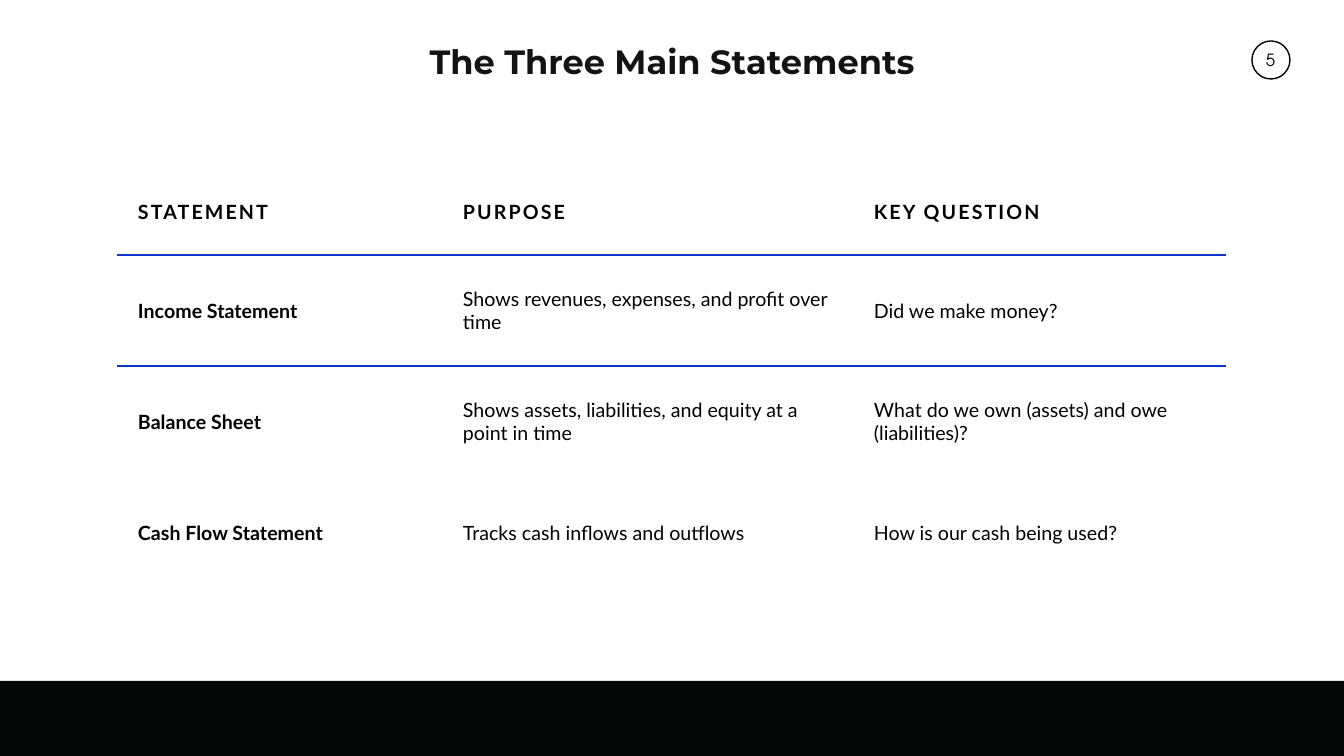
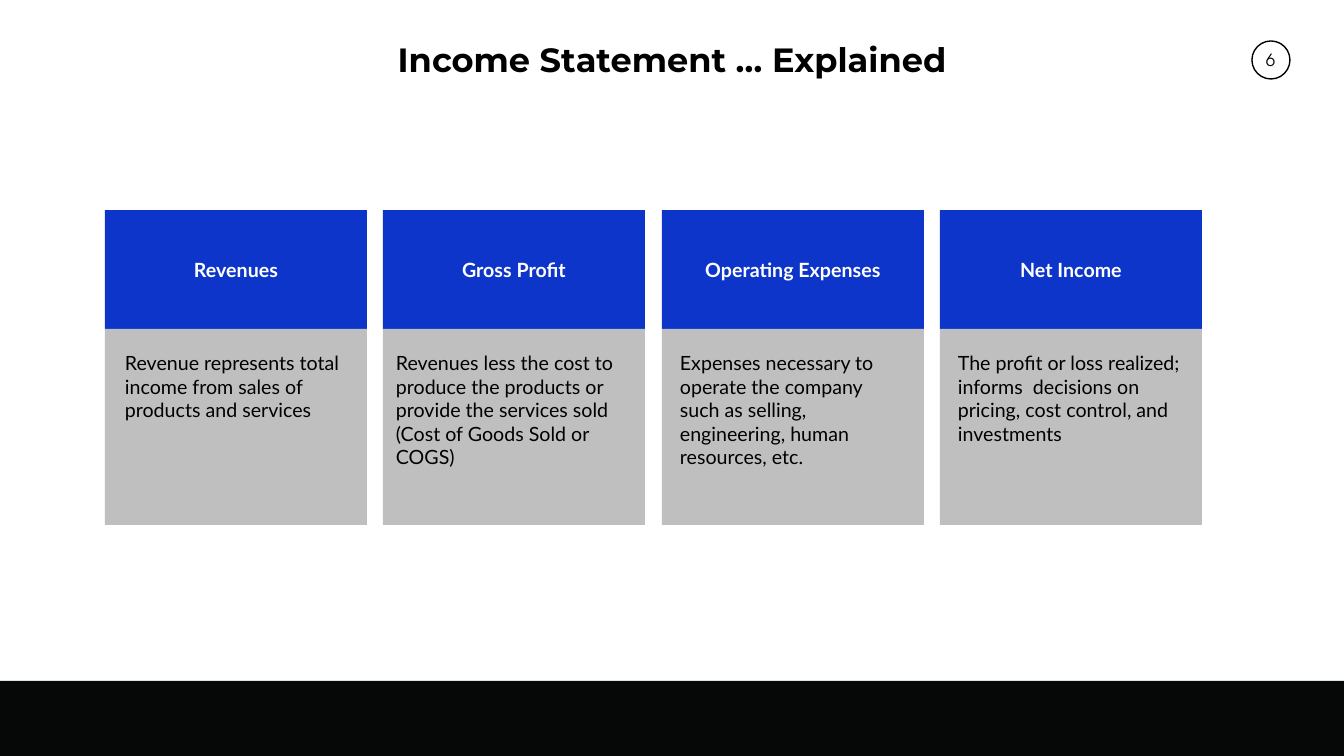
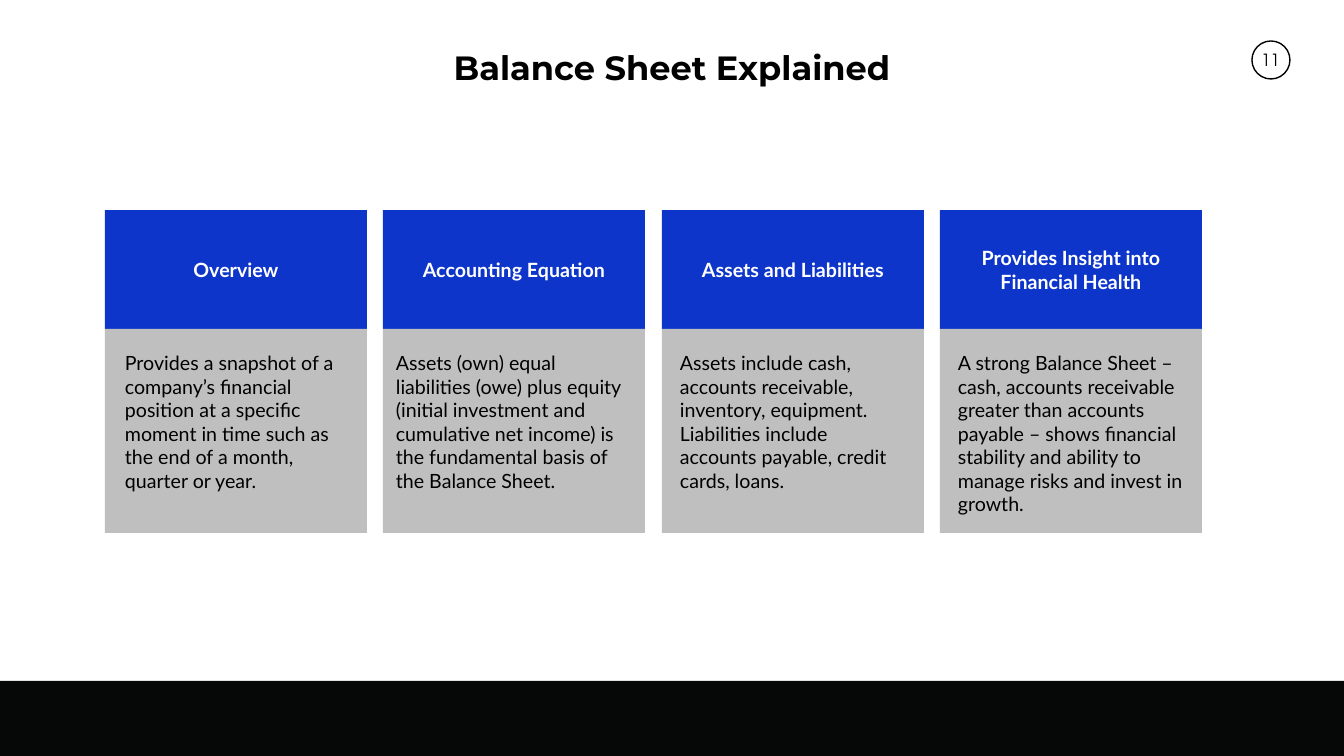
from pptx import Presentation
from pptx.dml.color import RGBColor
from pptx.enum.shapes import MSO_SHAPE
from pptx.enum.text import MSO_ANCHOR, MSO_AUTO_SIZE, PP_ALIGN
from pptx.oxml import parse_xml
from pptx.oxml.ns import nsdecls, qn
from pptx.util import Pt

RECTANGLE, OVAL = MSO_SHAPE.RECTANGLE, MSO_SHAPE.OVAL
TOP, MIDDLE = MSO_ANCHOR.TOP, MSO_ANCHOR.MIDDLE
LEFT, CENTER = PP_ALIGN.LEFT, PP_ALIGN.CENTER
FIXED, GROW = MSO_AUTO_SIZE.NONE, MSO_AUTO_SIZE.SHAPE_TO_FIT_TEXT

COLORS = {
    "black": "000000",
    "ink": "131316",
    "band": "060808",
    "blue": "0E35CA",
    "gray": "BFBFBF",
    "white": "FFFFFF",
}
BODY_FONT, TITLE_FONT, NUMBER_FONT = "Lato", "Montserrat", "TeX Gyre Adventor"
TITLE_ONLY = 5
NO_TABLE_STYLE = "{2D5ABB26-0587-4C30-8999-92F81FD0307C}"

# Slide and card grid, in px
WIDTH, HEIGHT = 1344, 756
CARD_LEFT, CARD_RIGHT, CARD_WIDTH = 105, 1202, 262
CARD_TOP, HEAD_HEIGHT = 210, 119
TEXT_OFFSETS = (10, 3, 8, 8)
TEXT_WIDTHS = (239, 259, 243, 262)

STATEMENTS = [
    ("STATEMENT", "PURPOSE", "KEY QUESTION"),
    ("Income Statement", "Shows revenues, expenses, and profit over time",
     "Did we make money?"),
    ("Balance Sheet", "Shows assets, liabilities, and equity at a point in time",
     "What do we own (assets) and owe (liabilities)?"),
    ("Cash Flow Statement", "Tracks cash inflows and outflows",
     "How is our cash being used?"),
]
INCOME_CARDS = [
    ("Revenues",
     "Revenue represents total income from sales of products and services"),
    ("Gross Profit",
     "Revenues less the cost to produce the products or provide the services "
     "sold (Cost of Goods Sold or COGS)"),
    ("Operating Expenses",
     "Expenses necessary to operate the company such as selling, engineering, "
     "human resources, etc."),
    ("Net Income",
     "The profit or loss realized; informs  decisions on pricing, cost control, "
     "and investments"),
]
BALANCE_CARDS = [
    ("Overview",
     "Provides a snapshot of a company’s financial position at a specific moment "
     "in time such as the end of a month, quarter or year."),
    ("Accounting Equation",
     "Assets (own) equal liabilities (owe) plus equity (initial investment and "
     "cumulative net income) is the fundamental basis of the Balance Sheet."),
    ("Assets and Liabilities",
     "Assets include cash, accounts receivable, inventory, equipment. "
     "Liabilities include accounts payable, credit cards, loans."),
    ("Provides Insight into Financial Health",
     "A strong Balance Sheet – cash, accounts receivable greater than accounts "
     "payable – shows financial stability and ability to manage risks and "
     "invest in growth."),
]


def px(length):
    return round(length * 914400 / 100.8)


def box(left, top, width, height):
    return px(left), px(top), px(width), px(height)


def color(name):
    return RGBColor.from_string(COLORS[name])


def write(frame, text, size=14, font=BODY_FONT, ink="black", bold=False, align=LEFT):
    paragraph = frame.paragraphs[0]
    paragraph.alignment = align
    run = paragraph.add_run()
    run.text = text
    run.font.size = Pt(size)
    run.font.name = font
    run.font.bold = bold
    run.font.color.rgb = color(ink)
    return run


def add_block(slide, kind, place, fill=None, line=None):
    block = slide.shapes.add_shape(kind, *box(*place))
    block.shadow.inherit = False
    if fill:
        block.fill.solid()
        block.fill.fore_color.rgb = color(fill)
    else:
        block.fill.background()
    if line:
        block.line.color.rgb = color(line)
        block.line.width = Pt(1)
    else:
        block.line.fill.background()
    return block


def add_text(slide, place, text, wrap=True, **style):
    frame = slide.shapes.add_textbox(*box(*place)).text_frame
    frame.word_wrap = wrap
    frame.auto_size = GROW
    frame.vertical_anchor = TOP
    write(frame, text, **style)


def start_slide(prs, title, number, title_top, title_ink="black"):
    """New slide with the shared page number, band and title style."""
    slide = prs.slides.add_slide(prs.slide_layouts[TITLE_ONLY])
    add_block(slide, OVAL, (1252, 41, 38, 38), line="black")
    add_text(slide, (1250, 45, 41, 30), str(number), wrap=False, size=12,
             font=NUMBER_FONT, align=CENTER)
    add_block(slide, RECTANGLE, (0, 681, WIDTH, HEIGHT - 681), fill="band")

    heading = slide.shapes.title
    heading.left, heading.top, heading.width, heading.height = box(
        93, title_top, 1158, 60)
    frame = heading.text_frame
    frame.auto_size = FIXED
    frame.word_wrap = True
    frame.vertical_anchor = MIDDLE
    write(frame, title, size=24, font=TITLE_FONT, ink=title_ink, bold=True,
          align=CENTER)
    frame.paragraphs[0].line_spacing = 0.9
    return slide


def add_border(cell, side):
    cell._tc.get_or_add_tcPr().insert(0, parse_xml(
        f'<a:{side} {nsdecls("a")} w="{Pt(2.25)}"><a:solidFill>'
        f'<a:srgbClr val="{COLORS["blue"]}"/></a:solidFill></a:{side}>'))


def add_statement_table(slide, rows):
    widths, heights = (325, 411, 373), (87, 111, 111, 111)
    holder = slide.shapes.add_table(
        len(rows), len(widths), *box(117, 168, sum(widths), sum(heights)))
    table = holder.table
    table.first_row = table.horz_banding = False
    next(holder.element.iter(qn("a:tableStyleId"))).text = NO_TABLE_STYLE
    for column, width in zip(table.columns, widths):
        column.width = px(width)
    for r, (texts, height) in enumerate(zip(rows, heights)):
        table.rows[r].height = px(height)
        for c, text in enumerate(texts):
            cell = table.cell(r, c)
            cell.fill.background()
            cell.vertical_anchor = MIDDLE
            cell.margin_left = cell.margin_right = px(21)
            cell.margin_top = cell.margin_bottom = px(21)
            run = write(cell.text_frame, text, bold=r == 0 or c == 0)
            if r == 0:
                run._r.get_or_add_rPr().set("spc", "150")
            # The header rule is shared by the first two rows
            if r < 2:
                add_border(cell, ("lnB", "lnT")[r])


def add_cards(slide, cards, body_height):
    pitch = (CARD_RIGHT - CARD_LEFT - CARD_WIDTH) / (len(cards) - 1)
    body_top = CARD_TOP + HEAD_HEIGHT
    for i, (head, body) in enumerate(cards):
        left = CARD_LEFT + round(i * pitch)
        header = add_block(slide, RECTANGLE,
                           (left, CARD_TOP, CARD_WIDTH, HEAD_HEIGHT), fill="blue")
        header.text_frame.word_wrap = True
        header.text_frame.vertical_anchor = MIDDLE
        write(header.text_frame, head, ink="white", bold=True, align=CENTER)
        add_block(slide, RECTANGLE, (left, body_top, CARD_WIDTH, body_height),
                  fill="gray")
        add_text(slide, (left + TEXT_OFFSETS[i], body_top + 17,
                         TEXT_WIDTHS[i], body_height - 28), body)


def main():
    prs = Presentation()
    prs.slide_width, prs.slide_height = px(WIDTH), px(HEIGHT)

    # Overview of the statements
    overview = start_slide(prs, "The Three Main Statements", 5, 34, "ink")
    add_statement_table(overview, STATEMENTS)

    # Income statement
    income = start_slide(prs, "Income Statement … Explained", 6, 32)
    add_cards(income, INCOME_CARDS, 196)

    # Balance sheet
    balance = start_slide(prs, "Balance Sheet Explained", 11, 40)
    add_cards(balance, BALANCE_CARDS, 204)

    prs.save("out.pptx")


if __name__ == "__main__":
    main()
